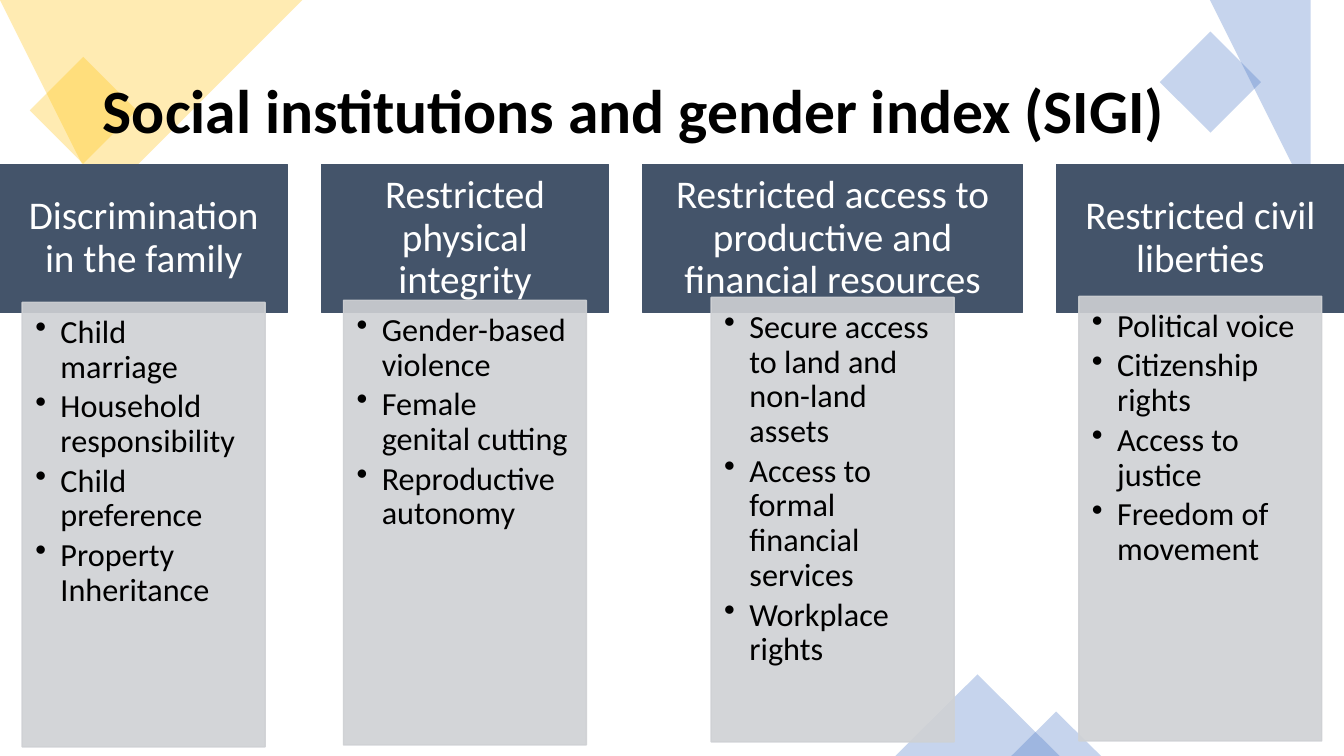
from lxml.etree import SubElement
from pptx import Presentation
from pptx.dml.color import RGBColor
from pptx.enum.shapes import MSO_SHAPE
from pptx.enum.text import MSO_ANCHOR, MSO_AUTO_SIZE, PP_ALIGN
from pptx.oxml.ns import qn
from pptx.util import Inches, Pt

COLORS = {"gold": "FFC000", "blue": "4472C4", "slate": "44546A",
          "panel": "CFD1D4", "white": "FFFFFF", "black": "000000"}
SLIDE_W, SLIDE_H = 13.33, 7.5


def paint(sp, color, opacity=100, outlined=False):
    sp.shadow.inherit = False
    fills = [sp.fill]
    if outlined:
        sp.line.width = Pt(1)
        fills.append(sp.line.fill)
    else:
        sp.line.fill.background()
    for fill in fills:
        fill.solid()
        fill.fore_color.rgb = RGBColor.from_string(COLORS[color])
    if opacity < 100:
        for clr in sp._element.spPr.iter(qn("a:srgbClr")):
            SubElement(clr, qn("a:alpha"), val=str(opacity * 1000))


def write(p, text, size, color, bold=False):
    p.line_spacing = 0.9
    r = p.add_run()
    r.text = text
    r.font.name = "Calibri"
    r.font.size = Pt(size)
    r.font.bold = bold
    r.font.color.rgb = RGBColor.from_string(COLORS[color])


prs = Presentation()
prs.slide_width, prs.slide_height = Inches(SLIDE_W), Inches(SLIDE_H)
s = prs.slides.add_slide(prs.slide_layouts[5])

corners = [
    ("gold", [(0, 0), (3.1, 0), (1.4, 1.62), (0, 0.28)]),
    ("blue", [(11.81, 0), (SLIDE_W, 0), (SLIDE_W, 1.3), (12.92, 1.71), (11.5, 0.3)]),
]
for color, points in corners:
    builder = s.shapes.build_freeform(*points[0], scale=Inches(1))
    builder.add_line_segments(points[1:], close=True)
    paint(builder.convert_to_shape(), color, 30)

accents = [
    (MSO_SHAPE.RECTANGLE, "gold", 45, 0.45, 0.72, 0.75, 0.75),
    (MSO_SHAPE.RECTANGLE, "blue", 45, 11.65, 0.46, 0.71, 0.71),
    (MSO_SHAPE.ISOSCELES_TRIANGLE, "blue", 0, 8.88, 6.69, 1.63, 0.81),
    (MSO_SHAPE.ISOSCELES_TRIANGLE, "blue", 0, 10.03, 7.06, 0.89, 0.44),
]
for kind, color, angle, *box in accents:
    sp = s.shapes.add_shape(kind, *map(Inches, box))
    sp.rotation = angle
    paint(sp, color, 30)

title = s.shapes.title
title.left, title.top, title.width, title.height = map(Inches, (0.92, 0.4, 11.5, 1.45))
tf = title.text_frame
tf.auto_size = MSO_AUTO_SIZE.NONE
tf.vertical_anchor = MSO_ANCHOR.MIDDLE
p = tf.paragraphs[0]
p.alignment = PP_ALIGN.LEFT
write(p, "Social institutions and gender index (SIGI)", 44, "black", True)
title.element.getparent().append(title.element)

columns = [
    ("Discrimination in the family", 2.85, 3,
     ["Child marriage", "Household responsibility", "Child preference",
      "Property Inheritance"]),
    ("Restricted physical integrity", 2.85, 2.98,
     ["Gender-based violence", "Female genital cutting", "Reproductive autonomy"]),
    ("Restricted access to productive and financial resources", 3.77, 2.95,
     ["Secure access to land and non-land assets",
      "Access to formal financial services", "Workplace rights"]),
    ("Restricted civil liberties", 2.85, 2.94,
     ["Political voice", "Citizenship rights", "Access to justice",
      "Freedom of movement"]),
]
PANEL_W, PANEL_H = 2.41, 4.41
gap = (SLIDE_W - sum(col[1] for col in columns)) / (len(columns) - 1)
left = 0
for heading, width, panel_top, items in columns:
    sp = s.shapes.add_shape(MSO_SHAPE.RECTANGLE, Inches(left), Inches(1.63),
                            Inches(width), Inches(1.47))
    paint(sp, "slate", outlined=True)
    tf = sp.text_frame
    tf.word_wrap = True
    tf.vertical_anchor = MSO_ANCHOR.MIDDLE
    tf.margin_left = tf.margin_right = Inches(0.22)
    tf.margin_top = tf.margin_bottom = Inches(0.12)
    p = tf.paragraphs[0]
    p.alignment = PP_ALIGN.CENTER
    write(p, heading, 28, "white")

    sp = s.shapes.add_shape(MSO_SHAPE.RECTANGLE, Inches(left + (width - PANEL_W) / 2),
                            Inches(panel_top), Inches(PANEL_W), Inches(PANEL_H))
    paint(sp, "panel", 90, outlined=True)
    tf = sp.text_frame
    tf.word_wrap = True
    tf.vertical_anchor = MSO_ANCHOR.TOP
    tf.margin_left = tf.margin_top = Inches(0.13)
    tf.margin_right, tf.margin_bottom = Inches(0.18), Inches(0.2)
    for i, item in enumerate(items):
        p = tf.add_paragraph() if i else tf.paragraphs[0]
        p.alignment = PP_ALIGN.LEFT
        p.level = 1
        p.space_after = Pt(3.5)
        write(p, item, 23, "black")
        pPr = p._p.get_or_add_pPr()
        pPr.set("marL", str(Inches(0.25)))
        pPr.set("indent", str(-Inches(0.25)))
        SubElement(pPr, qn("a:buChar"), char="•")
    left += width + gap

prs.save("out.pptx")
